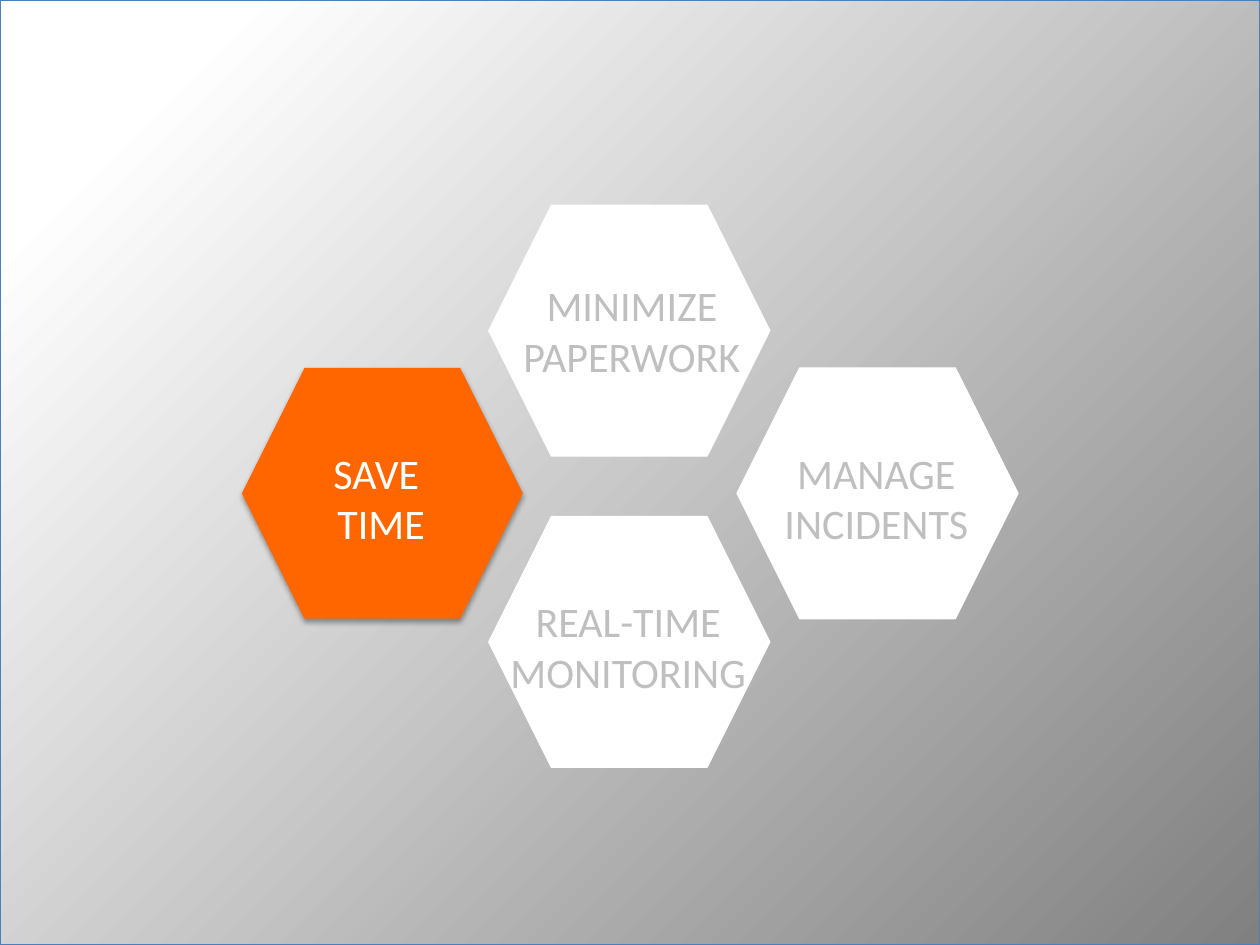
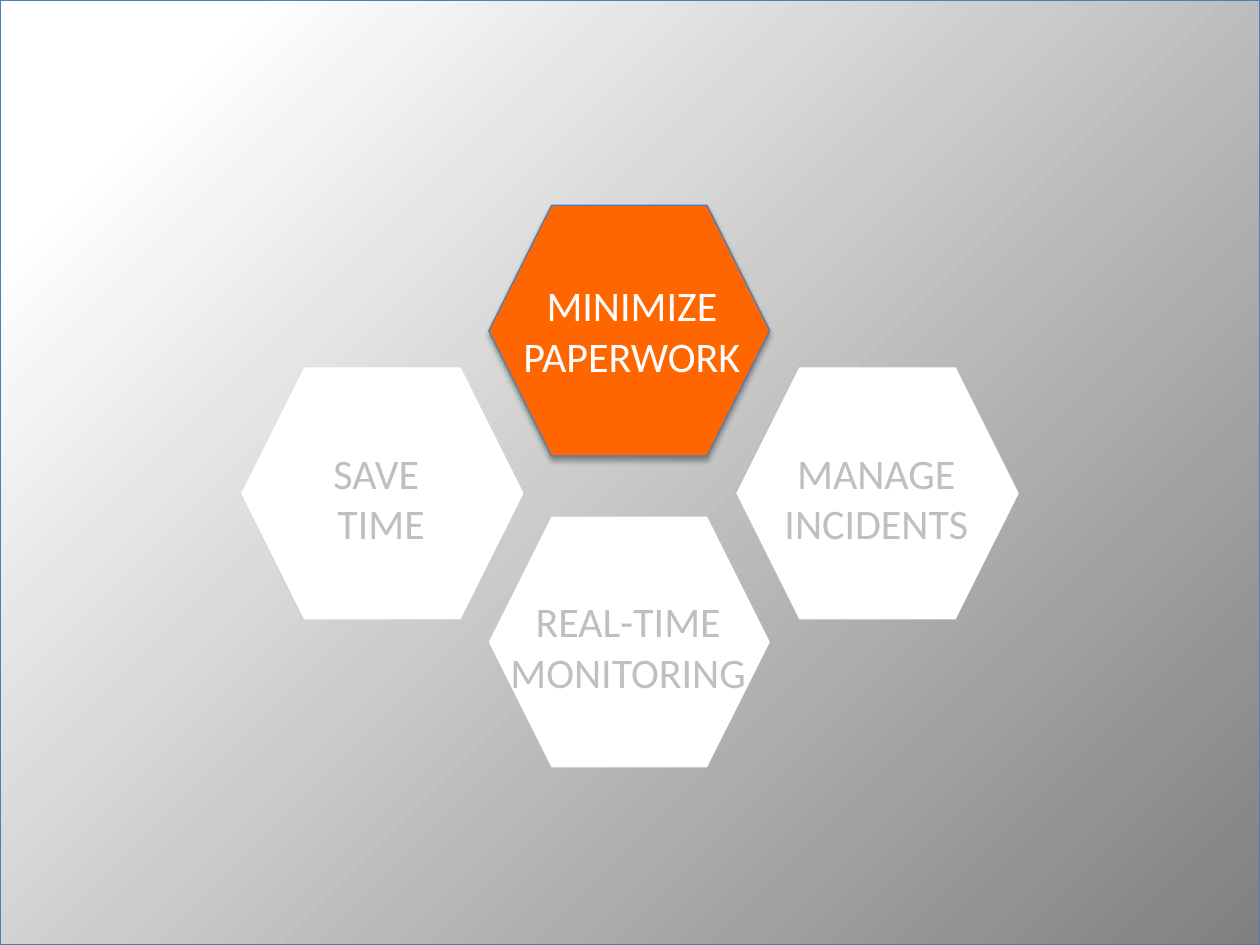
import collections

import lxml.etree
import pptx
import pptx.dml.color
import pptx.enum.shapes
import pptx.enum.text
import pptx.oxml
import pptx.oxml.ns
import pptx.util

Inches = pptx.util.Inches
Pt = pptx.util.Pt
RGBColor = pptx.dml.color.RGBColor
MSO_SHAPE = pptx.enum.shapes.MSO_SHAPE

ORANGE = RGBColor(0xFF, 0x66, 0x00)
WHITE = RGBColor(0xFF, 0xFF, 0xFF)
PALE_GREY = RGBColor(0xBF, 0xBF, 0xBF)
MID_GREY = RGBColor(0x80, 0x80, 0x80)
BLACK = RGBColor(0x00, 0x00, 0x00)
BLUE = RGBColor(0x4B, 0x7E, 0xBC)

SLIDE_WIDTH, SLIDE_HEIGHT = 10, 7.5
HEX_WIDTH, HEX_HEIGHT = 2.23, 1.99
LABEL_HEIGHT = 0.91
LABEL_FONT = {"name": "Calibri", "size": Pt(24)}
LABEL_FRAME = {
    "word_wrap": True,
    "auto_size": pptx.enum.text.MSO_AUTO_SIZE.SHAPE_TO_FIT_TEXT,
    "vertical_anchor": pptx.enum.text.MSO_ANCHOR.TOP,
}

Benefit = collections.namedtuple("Benefit", "lines left top label_dx label_dy label_width plate")
BENEFITS = [
    Benefit(["SAVE ", "TIME"], 1.92, 2.92, 0.24, 0.58, 1.73, False),
    Benefit(["MINIMIZE PAPERWORK"], 3.88, 1.63, 0.14, 0.54, 1.99, False),
    Benefit(["REAL-TIME", "MONITORING"], 3.88, 4.1, -0.04, 0.58, 2.29, False),
    Benefit(["MANAGE INCIDENTS"], 5.85, 2.92, 0.24, 0.58, 1.73, True),
]
SLIDES = [
    {"active": 0, "outlines": [None, WHITE, WHITE, WHITE]},
    {"active": 1, "outlines": [WHITE, BLUE, None, WHITE]},
]

NAMESPACE = pptx.oxml.ns.nsdecls("a")
GRADIENT = f"""<a:gradFill {NAMESPACE} rotWithShape="1"><a:gsLst>
<a:gs pos="0"><a:srgbClr val="{MID_GREY}"/></a:gs>
<a:gs pos="89000"><a:srgbClr val="{WHITE}"/></a:gs></a:gsLst>
<a:path path="circle"><a:fillToRect l="100000" t="100000"/></a:path></a:gradFill>"""
SHADOW = f"""<a:effectLst {NAMESPACE}>
<a:outerShdw blurRad="{Pt(3.1)}" dist="{Pt(1.8)}" dir="5400000" rotWithShape="0">
<a:srgbClr val="{BLACK}"><a:alpha val="35000"/></a:srgbClr></a:outerShdw></a:effectLst>"""


def set_formats(target, formats):
    """Set each attribute named in formats on the target."""
    for attribute, value in formats.items():
        setattr(target, attribute, value)


def swap_element(shape, tag, xml):
    """Replace one child of the shape properties with the given XML."""
    properties = shape.element.spPr
    properties.replace(properties.find(pptx.oxml.ns.qn(tag)), pptx.oxml.parse_xml(xml))


def add_panel(slide, preset, box, fill, outline):
    """Add a flat preset shape with a solid fill and an optional outline."""
    panel = slide.shapes.add_shape(preset, *map(Inches, box))
    panel.shadow.inherit = False
    panel.fill.solid()
    panel.fill.fore_color.rgb = fill
    if outline is None:
        panel.line.fill.background()
    else:
        panel.line.color.rgb = outline
        panel.line.width = Pt(0.75)
    return panel


def add_backdrop(slide):
    """Cover the slide with the grey corner gradient."""
    backdrop = add_panel(slide, MSO_SHAPE.RECTANGLE, (0, 0, SLIDE_WIDTH, SLIDE_HEIGHT), WHITE, BLUE)
    swap_element(backdrop, "a:solidFill", GRADIENT)


def add_label(slide, benefit, color):
    """Write the benefit's name over its hexagon."""
    box = (benefit.left + benefit.label_dx, benefit.top + benefit.label_dy,
           benefit.label_width, LABEL_HEIGHT)
    if benefit.plate:
        label = add_panel(slide, MSO_SHAPE.RECTANGLE, box, WHITE, None)
    else:
        label = slide.shapes.add_textbox(*map(Inches, box))
    frame = label.text_frame
    frame.text = "\n".join(benefit.lines)
    set_formats(frame, LABEL_FRAME)
    for paragraph in frame.paragraphs:
        paragraph.alignment = pptx.enum.text.PP_ALIGN.CENTER
        for run in paragraph.runs:
            set_formats(run.font, LABEL_FONT)
            run.font.color.rgb = color


def add_benefit(slide, benefit, active, outline):
    """Add one hexagon with its label, raised and orange when active."""
    box = (benefit.left, benefit.top, HEX_WIDTH, HEX_HEIGHT)
    hexagon = add_panel(slide, MSO_SHAPE.HEXAGON, box, ORANGE if active else WHITE, outline)
    if active:
        swap_element(hexagon, "a:effectLst", SHADOW)
    add_label(slide, benefit, WHITE if active else PALE_GREY)


def add_benefits_slide(presentation, active, outlines):
    """Add a slide of all benefits with one highlighted."""
    slide = presentation.slides.add_slide(presentation.slide_layouts[6])
    add_backdrop(slide)
    for index, (benefit, outline) in enumerate(zip(BENEFITS, outlines)):
        add_benefit(slide, benefit, index == active, outline)


def main():
    """Build and save the presentation."""
    presentation = pptx.Presentation()
    set_formats(presentation, {"slide_width": Inches(SLIDE_WIDTH),
                               "slide_height": Inches(SLIDE_HEIGHT)})
    for highlight in SLIDES:
        add_benefits_slide(presentation, **highlight)
    presentation.save("out.pptx")


if __name__ == "__main__":
    main()
